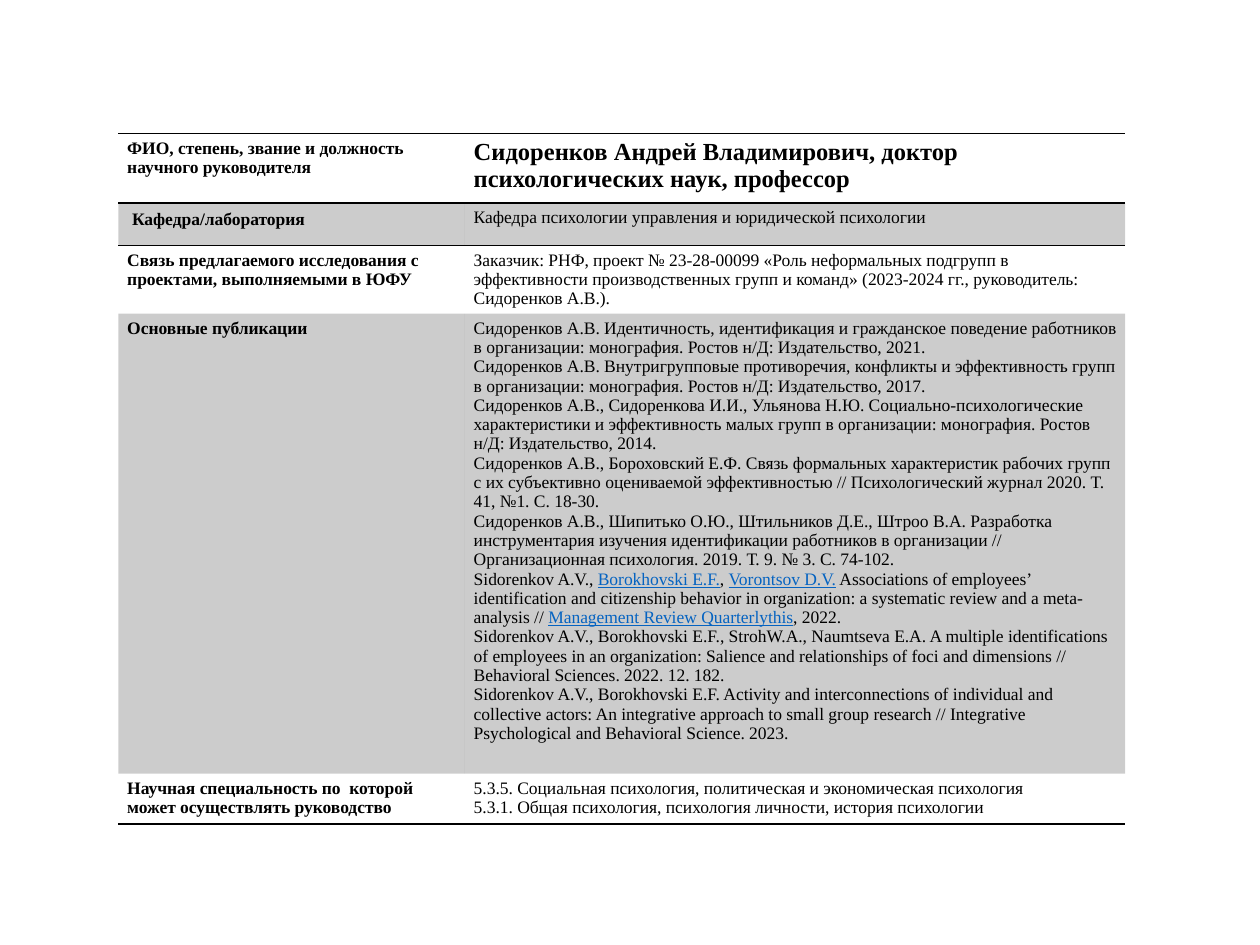
from lxml.etree import SubElement
from pptx import Presentation
from pptx.dml.color import RGBColor
from pptx.enum.text import PP_ALIGN
from pptx.oxml import parse_xml
from pptx.oxml.ns import nsdecls, qn
from pptx.util import Inches, Pt

COLORS = {"ink": "000000", "link": "0563C1"}
FONT = "Times New Roman"
NO_STYLE = "{2D5ABB26-0587-4C30-8999-92F81FD0307C}"
COL_WIDTHS = [2.75, 5.24]
ROW_HEIGHTS = [0.55, 0.34, 0.45, 3.65, 0.4]
SHADED_ROWS = {1, 3}
JUSTIFIED_ROWS = {1, 3}
RULES = {0: "TB", 1: "T", 4: "B"}  # horizontal rules by row

# Text between bars is shown as a link
PUBLICATIONS = [
    "Сидоренков А.В. Идентичность, идентификация и гражданское поведение работников "
    "в организации: монография. Ростов н/Д: Издательство, 2021.",
    "Сидоренков А.В. Внутригрупповые противоречия, конфликты и эффективность групп "
    "в организации: монография. Ростов н/Д: Издательство, 2017.",
    "Сидоренков А.В., Сидоренкова И.И., Ульянова Н.Ю. Социально-психологические "
    "характеристики и эффективность малых групп в организации: монография. "
    "Ростов н/Д: Издательство, 2014.",
    "Сидоренков А.В., Бороховский Е.Ф. Связь формальных характеристик рабочих групп "
    "c их субъективно оцениваемой эффективностью // Психологический журнал 2020. "
    "T. 41, №1. С. 18-30.",
    "Сидоренков А.В., Шипитько О.Ю., Штильников Д.Е., Штроо В.А. Разработка "
    "инструментария изучения идентификации работников в организации // "
    "Организационная психология. 2019. Т. 9. № 3. С. 74-102.",
    "Sidorenkov A.V., |Borokhovski E.F.|, |Vorontsov D.V.| Associations of employees’ "
    "identification and citizenship behavior in organization: a systematic review and "
    "a meta-analysis // |Management Review Quarterlythis|, 2022.",
    "Sidorenkov A.V., Borokhovski E.F., StrohW.A., Naumtseva E.A. A multiple "
    "identifications of employees in an organization: Salience and relationships of "
    "foci and dimensions // Behavioral Sciences. 2022. 12. 182.",
    "Sidorenkov A.V., Borokhovski E.F. Activity and interconnections of individual and "
    "collective actors: An integrative approach to small group research // Integrative "
    "Psychological and Behavioral Science. 2023.",
]
ROWS = [
    ("ФИО, степень, звание и должность научного руководителя",
     ["Сидоренков Андрей Владимирович, доктор психологических наук, профессор"]),
    (" Кафедра/лаборатория",
     ["Кафедра психологии управления и юридической психологии"]),
    ("Связь предлагаемого исследования с проектами, выполняемыми в ЮФУ",
     ["Заказчик: РНФ, проект № 23-28-00099 «Роль неформальных подгрупп в эффективности "
      "производственных групп и команд» (2023-2024 гг., руководитель: Сидоренков А.В.)."]),
    ("Основные публикации", PUBLICATIONS),
    ("Научная специальность по  которой может осуществлять руководство",
     ["5.3.5. Социальная психология, политическая и экономическая психология",
      "5.3.1. Общая психология, психология личности, история психологии"]),
]


def write_cell(cell, lines, size=10, bold=False, align=None):
    cell.margin_left = cell.margin_right = Inches(0.07)
    cell.margin_top = cell.margin_bottom = Inches(0.04)
    tf = cell.text_frame
    for i, line in enumerate(lines):
        p = tf.paragraphs[0] if i == 0 else tf.add_paragraph()
        p.alignment = align
        for j, part in enumerate(line.split("|")):
            is_link = j % 2 == 1
            r = p.add_run()
            r.text = part
            r.font.name, r.font.size, r.font.bold = FONT, Pt(size), bold
            r.font.underline = is_link
            r.font.color.rgb = RGBColor.from_string(COLORS["link" if is_link else "ink"])


def shade_cell(cell, shaded):
    if not shaded:
        cell.fill.background()
        return
    cell.fill.solid()
    cell.fill.fore_color.rgb = RGBColor.from_string(COLORS["ink"])
    color = cell._tc.tcPr.find(".//" + qn("a:srgbClr"))
    SubElement(color, qn("a:alpha"), val="20000")


def rule_cell(cell, sides):
    # Lines come before the fill, top before bottom
    for side in reversed(sides):
        line = parse_xml(
            f'<a:ln{side} {nsdecls("a")} w="{Pt(1)}"><a:solidFill>'
            f'<a:srgbClr val="{COLORS["ink"]}"/></a:solidFill></a:ln{side}>')
        cell._tc.get_or_add_tcPr().insert(0, line)


def add_supervisor_table(s, left, top, width, height):
    shape = s.shapes.add_table(len(ROWS), len(COL_WIDTHS), left, top, width, height)
    table = shape.table
    table.first_row = table.horz_banding = False
    table._tbl.tblPr.find(qn("a:tableStyleId")).text = NO_STYLE
    for column, w in zip(table.columns, COL_WIDTHS):
        column.width = Inches(w)
    for i, (label, lines) in enumerate(ROWS):
        table.rows[i].height = Inches(ROW_HEIGHTS[i])
        label_cell, value_cell = table.cell(i, 0), table.cell(i, 1)
        align = PP_ALIGN.JUSTIFY if i in JUSTIFIED_ROWS else None
        write_cell(label_cell, [label], bold=True, align=align)
        # The name in the first row stands out
        write_cell(value_cell, lines, size=14 if i == 0 else 10, bold=i == 0)
        for cell in (label_cell, value_cell):
            shade_cell(cell, i in SHADED_ROWS)
            rule_cell(cell, RULES.get(i, ""))
    # The leading space of the department label is slightly larger
    p = table.cell(1, 0).text_frame.paragraphs[0]
    p.runs[0].text = " "
    r = p.add_run()
    r.text = ROWS[1][0].strip()
    r.font.name, r.font.size, r.font.bold = FONT, Pt(10), True
    r.font.color.rgb = RGBColor.from_string(COLORS["ink"])
    p.runs[0].font.size = Pt(11)


def main():
    prs = Presentation()
    prs.slide_width, prs.slide_height = Inches(10), Inches(7.5)
    s = prs.slides.add_slide(prs.slide_layouts[6])
    add_supervisor_table(s, Inches(0.94), Inches(1.06),
                         Inches(sum(COL_WIDTHS)), Inches(sum(ROW_HEIGHTS)))
    prs.save("out.pptx")


if __name__ == "__main__":
    main()
